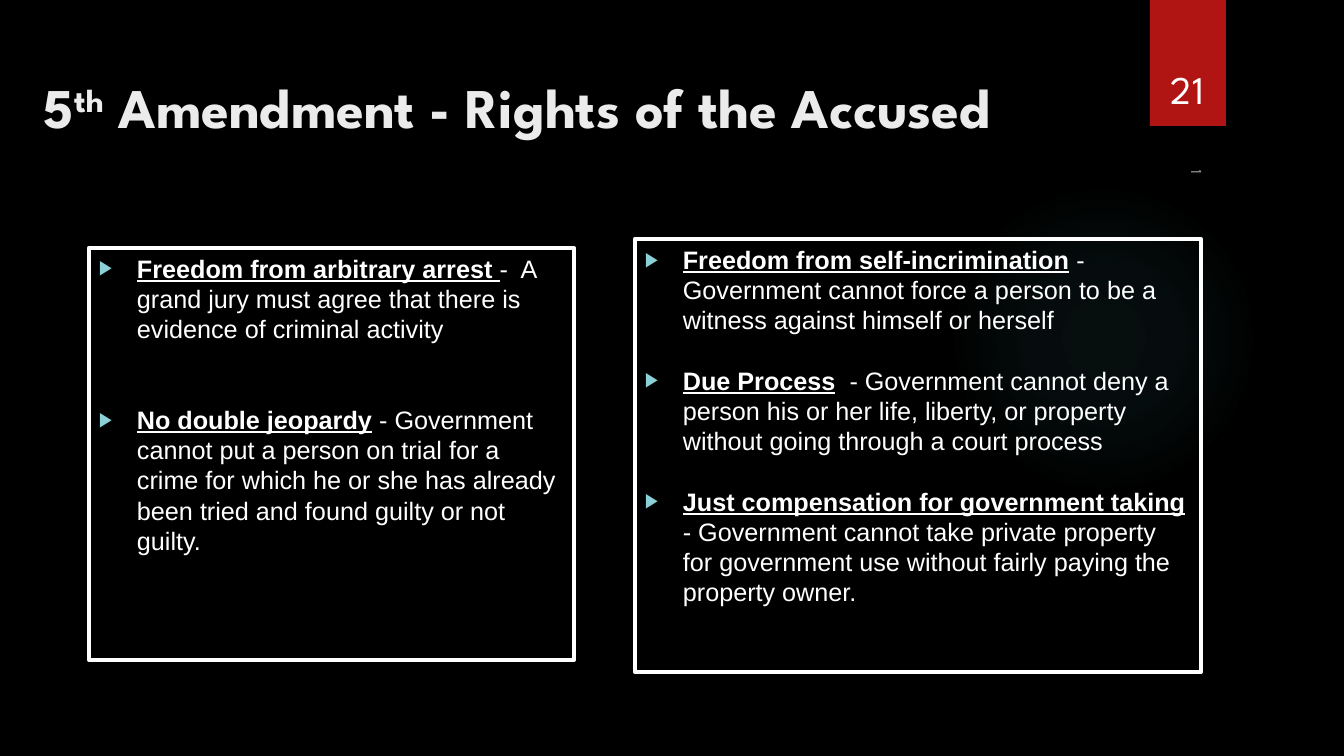
from lxml import etree
from pptx import Presentation, util as u
from pptx.dml.color import RGBColor
from pptx.enum import shapes, text
from pptx.oxml import parse_xml
from pptx.oxml.ns import nsdecls, qn

# Content: (left, top, width, height) in px, then wording
SLIDE = (1344, 756)
GLOW = (949, 184, 310, 310)
GLOW_STOPS = [(0, 7), (36, 6), (69, 0), (100, 0)]  # position %, opacity %
RIBBON = (1150, 0, 76, 126)
TITLE = (34, 50, 1116, 117)
TITLE_RUNS = [("5", 0), ("th", 30), (" Amendment - Rights of the Accused", 0)]
PAGE_NUMBER = (1141, 32, 93, 85)
SIDE_NUMBER = (987, 356, 425, 33)
# Each panel: place, blank lines between points, points as (term, meaning)
PANELS = [
    ((89, 248, 485, 412), 2, [
        ("Freedom from arbitrary arrest ",
         "-  A grand jury must agree that there is evidence of criminal activity"),
        ("No double jeopardy",
         " - Government cannot put a person on trial for a crime for which "
         "he or she has already been tried and found guilty or not guilty."),
    ]),
    ((635, 239, 566, 433), 1, [
        ("Freedom from self-incrimination",
         " - Government cannot force a person to be a witness against "
         "himself or herself"),
        ("Due Process",
         "  - Government cannot deny a person his or her life, liberty, or "
         "property without going through a court process"),
        ("Just compensation for government taking",
         " - Government cannot take private property for government use "
         "without fairly paying the property owner."),
    ]),
]
COLORS = {"back": "000000", "glow": "50B9C1", "ribbon": "B01513",
          "title": "EBEBEB", "white": "FFFFFF", "bullet": "8AD0D6"}
HEAD_FONT, BODY_FONT = "League Spartan", "Arial"
LINE_PT = 21.6
INDENT = 38


def px(length):
    return round(length * 914400 / 100.8)


def color(name):
    return RGBColor.from_string(COLORS[name])


def add_shape(kind, place):
    shape = page.shapes.add_shape(kind, *map(px, place))
    shape.shadow.inherit = False
    shape.line.fill.background()
    return shape


def add_box(place, anchor):
    box = page.shapes.add_textbox(*map(px, place))
    box.text_frame.word_wrap = True
    box.text_frame.vertical_anchor = anchor
    return box


def add_span(para, words, size, font, ink, bold=False, underline=False):
    span = para.add_run()
    span.text = words
    span.font.size, span.font.name = u.Pt(size), font
    span.font.bold, span.font.underline = bold, underline
    span.font.color.rgb = color(ink)
    return span


def add_bullet(para):
    props = para._p.get_or_add_pPr()
    props.set("marL", str(px(INDENT)))
    props.set("indent", str(-px(INDENT)))
    tint = etree.SubElement(props, qn("a:buClr"))
    etree.SubElement(tint, qn("a:srgbClr"), val=COLORS["bullet"])
    etree.SubElement(props, qn("a:buSzPct"), val="80000")
    etree.SubElement(props, qn("a:buFont"), typeface=BODY_FONT)
    etree.SubElement(props, qn("a:buChar"), char="▶")


deck = Presentation()
deck.slide_width, deck.slide_height = map(px, SLIDE)
page = deck.slides.add_slide(deck.slide_layouts[6])
page.background.fill.solid()
page.background.fill.fore_color.rgb = color("back")

# Soft glow
glow = add_shape(shapes.MSO_SHAPE.OVAL, GLOW)
stops = "".join(
    f'<a:gs pos="{at * 1000}"><a:srgbClr val="{COLORS["glow"]}">'
    f'<a:alpha val="{opacity * 1000}"/></a:srgbClr></a:gs>'
    for at, opacity in GLOW_STOPS)
glow._element.spPr.find(qn("a:prstGeom")).addnext(parse_xml(
    f'<a:gradFill {nsdecls("a")}><a:gsLst>{stops}</a:gsLst><a:path path="circle">'
    '<a:fillToRect l="50000" t="50000" r="50000" b="50000"/></a:path></a:gradFill>'))

# Ribbon
ribbon = add_shape(shapes.MSO_SHAPE.RECTANGLE, RIBBON)
ribbon.fill.solid()
ribbon.fill.fore_color.rgb = color("ribbon")

# Title
title = add_box(TITLE, text.MSO_ANCHOR.TOP)
title.text_frame.margin_top = px(23)
for words, raised in TITLE_RUNS:
    span = add_span(title.text_frame.paragraphs[0], words, 40, HEAD_FONT,
                    "title", bold=True)
    if raised:
        span.font._element.set("baseline", str(raised * 1000))

# Framed panels
for place, gap_lines, points in PANELS:
    panel = add_shape(shapes.MSO_SHAPE.RECTANGLE, place)
    panel.fill.background()
    panel.line.color.rgb = color("white")
    panel.line.width = u.Pt(3)
    frame = panel.text_frame
    frame.word_wrap = True
    frame.vertical_anchor = text.MSO_ANCHOR.TOP
    for number, (term, meaning) in enumerate(points):
        para = frame.add_paragraph() if number else frame.paragraphs[0]
        para.alignment = text.PP_ALIGN.LEFT
        para.line_spacing = u.Pt(LINE_PT)
        if number:
            para.space_before = u.Pt(gap_lines * LINE_PT)
        add_bullet(para)
        add_span(para, term, 18, BODY_FONT, "white", bold=True, underline=True)
        add_span(para, meaning, 18, BODY_FONT, "white")

# Side number, turned and translucent
side = add_box(SIDE_NUMBER, text.MSO_ANCHOR.BOTTOM)
side.rotation = 90
span = add_span(side.text_frame.paragraphs[0], "1", 11, HEAD_FONT, "white")
ink = span.font._element.find(".//" + qn("a:srgbClr"))
etree.SubElement(ink, qn("a:alpha"), val="60000")

# Page number on the ribbon
number_box = add_box(PAGE_NUMBER, text.MSO_ANCHOR.BOTTOM)
para = number_box.text_frame.paragraphs[0]
para.alignment = text.PP_ALIGN.CENTER
add_span(para, "21", 28, HEAD_FONT, "white")

deck.save("out.pptx")
